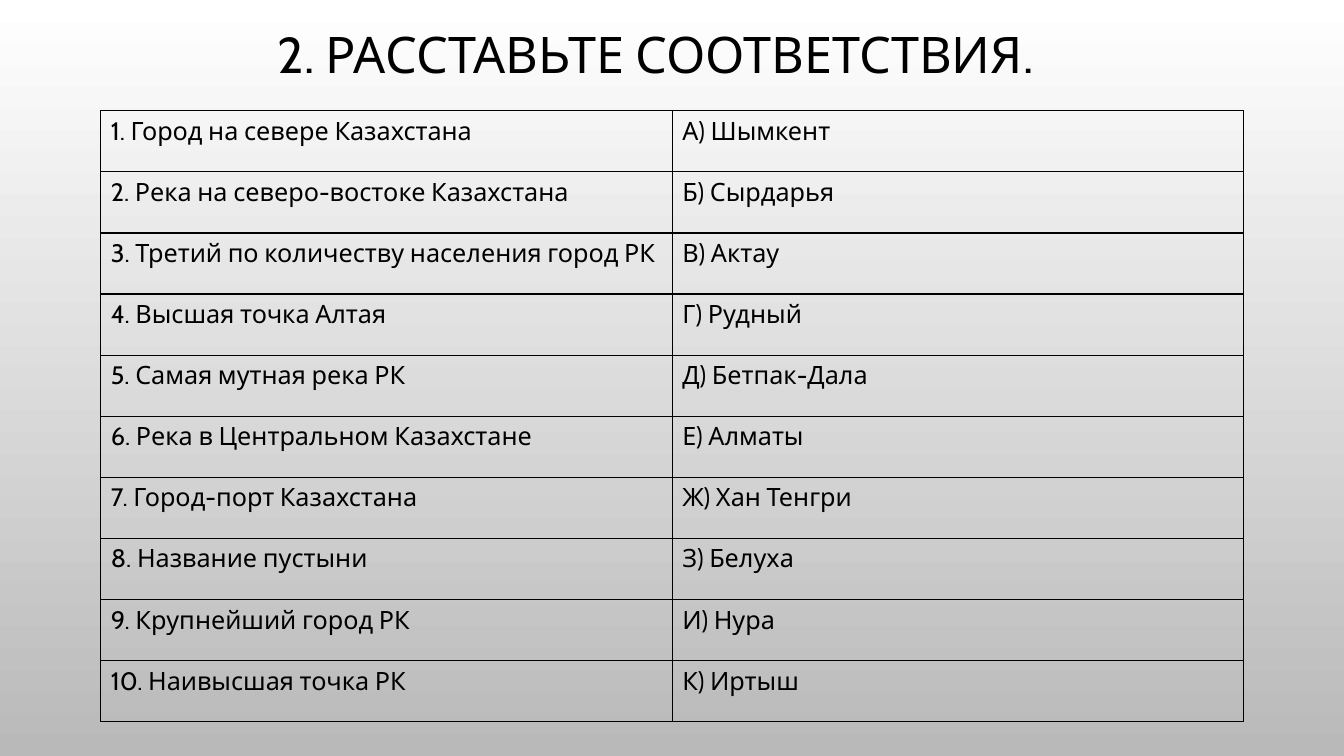
from lxml import etree
from pptx import Presentation
from pptx import util as u
from pptx.dml.color import RGBColor
from pptx.enum import text
from pptx.oxml import parse_xml
from pptx.oxml.ns import nsdecls


def rgb(value):
    return RGBColor.from_string(value)


def write(tf, content, size, align=text.PP_ALIGN.LEFT, spacing=1.0, color="000000"):
    p = tf.paragraphs[0]
    p.alignment = align
    p.line_spacing = spacing
    r = p.add_run()
    r.text = content
    r.font.name = "Cabin"
    r.font.size = u.Pt(size)
    r.font.bold = False
    r.font.color.rgb = rgb(color)


prs = Presentation()
prs.slide_width, prs.slide_height = u.Cm(33.87), u.Cm(19.05)
s = prs.slides.add_slide(prs.slide_layouts[5])

fill = s.background.fill
fill.gradient()
fill.gradient_angle = 270
for stop, color in zip(fill.gradient_stops, ["FFFFFF", "B9B9B9"]):
    stop.color.rgb = rgb(color)
for stop, position in zip(fill.gradient_stops, [0, 1]):
    stop.position = position

title = s.shapes.title
title.left, title.top = u.Cm(2.13), u.Cm(0.33)
title.width, title.height = u.Cm(28.78), u.Cm(2.21)
tf = title.text_frame
tf.word_wrap = True
tf.auto_size = text.MSO_AUTO_SIZE.NONE
tf.vertical_anchor = text.MSO_ANCHOR.MIDDLE
write(tf, "2. РАССТАВЬТЕ СООТВЕТСТВИЯ.", 36, align=text.PP_ALIGN.CENTER, spacing=0.9)

pairs = [
    ("1. Город на севере Казахстана", "А) Шымкент"),
    ("2. Река на северо-востоке Казахстана", "Б) Сырдарья"),
    ("3. Третий по количеству населения город РК", "В) Актау"),
    ("4. Высшая точка Алтая", "Г) Рудный"),
    ("5. Самая мутная река РК", "Д) Бетпак-Дала"),
    ("6. Река в Центральном Казахстане", "Е) Алматы"),
    ("7. Город-порт Казахстана", "Ж) Хан Тенгри"),
    ("8. Название пустыни", "З) Белуха"),
    ("9. Крупнейший город РК", "И) Нура"),
    ("10. Наивысшая точка РК", "К) Иртыш"),
]
frame = s.shapes.add_table(
    len(pairs), 2, u.Cm(2.54), u.Cm(2.79), u.Cm(28.8), u.Cm(1.54 * len(pairs))
)
table = frame.table
table.first_row = False
table.horz_banding = False

for row, pair in zip(table.rows, pairs):
    row.height = u.Cm(1.54)
    for cell, content in zip(row.cells, pair):
        write(cell.text_frame, content, 18)
        tc_pr = cell._tc.get_or_add_tcPr()
        for side in ("lnL", "lnR", "lnT", "lnB"):
            ln = parse_xml(f'<a:{side} {nsdecls("a")} w="{u.Pt(1)}"/>')
            solid = etree.SubElement(ln, ln.tag.replace(side, "solidFill"))
            etree.SubElement(solid, ln.tag.replace(side, "srgbClr"), val="000000")
            tc_pr.append(ln)
        cell.fill.background()

prs.save("out.pptx")
